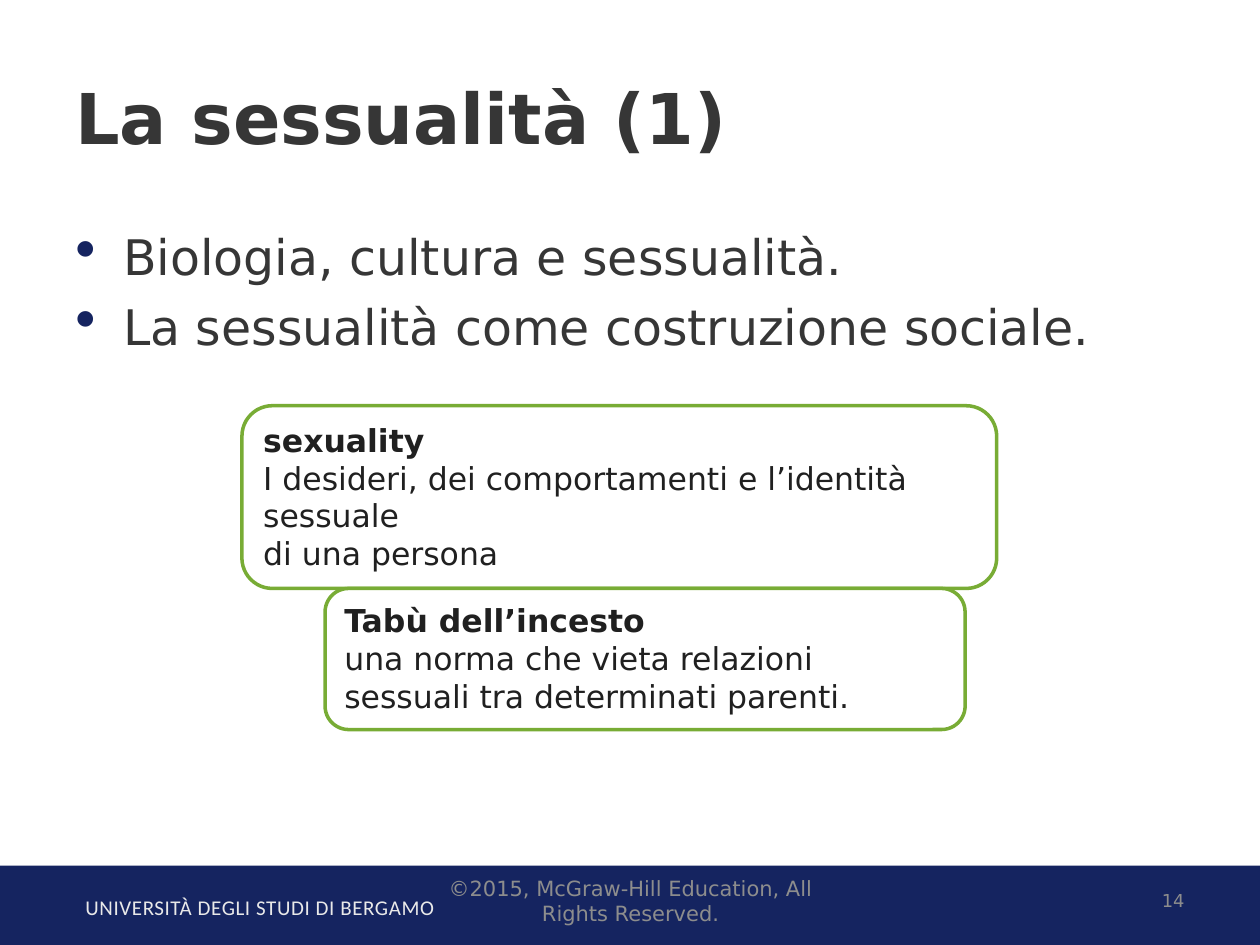
import dataclasses

import pptx
import pptx.dml.color
import pptx.enum.shapes
import pptx.enum.text
import pptx.util
from lxml import etree

Inches = pptx.util.Inches
Pt = pptx.util.Pt
Align = pptx.enum.text.PP_ALIGN
Anchor = pptx.enum.text.MSO_ANCHOR
Shapes = pptx.enum.shapes.MSO_SHAPE


@dataclasses.dataclass(frozen=True)
class Theme:
    navy: str = "152460"
    green: str = "78AC35"
    white: str = "FFFFFF"
    heading: str = "363636"
    ink: str = "202020"
    grey: str = "8D8D8D"
    pale: str = "E9E9E9"
    font: str = "DejaVu Sans"
    footer_font: str = "Calibri"
    title_size: float = 40
    body_size: float = 28
    card_size: float = 18
    footer_size: float = 12
    number_size: float = 10.2


THEME = Theme()


def rgb(value):
    return pptx.dml.color.RGBColor.from_string(value)


def apply(target, formats):
    for name, value in formats.items():
        setattr(target, name, value)


def write(para, text, size, color, bold=False, font=THEME.font):
    span = para.add_run()
    span.text = text
    apply(span.font, {"size": Pt(size), "name": font, "bold": bold})
    span.font.color.rgb = rgb(color)
    return span


def add_text_box(page, box, anchor=Anchor.TOP):
    frame = page.shapes.add_textbox(*map(Inches, box)).text_frame
    apply(frame, {"word_wrap": True, "vertical_anchor": anchor})
    return frame


def add_filled_shape(page, kind, box, fill):
    shape = page.shapes.add_shape(kind, *map(Inches, box))
    shape.shadow.inherit = False
    shape.fill.solid()
    shape.fill.fore_color.rgb = rgb(fill)
    return shape


def add_bullet(para):
    properties = para._p.get_or_add_pPr()
    indent = Inches(0.38)
    properties.set("marL", str(indent))
    properties.set("indent", str(-indent))
    namespace = pptx.oxml.ns.nsdecls("a")
    for element in (
        f'<a:buClr {namespace}><a:srgbClr val="{THEME.navy}"/></a:buClr>',
        f'<a:buSzPct {namespace} val="122000"/>',
        f'<a:buChar {namespace} char="•"/>',
    ):
        properties.append(etree.fromstring(element))


def add_title(page, box, text):
    frame = add_text_box(page, box, Anchor.MIDDLE)
    write(frame.paragraphs[0], text, THEME.title_size, THEME.heading, bold=True)


def add_bullets(page, box, lines):
    frame = add_text_box(page, box)
    for index, line in enumerate(lines):
        para = frame.add_paragraph() if index else frame.paragraphs[0]
        add_bullet(para)
        para.space_before = Pt(6.5 if index else 0)
        write(para, line, THEME.body_size, THEME.heading)


def add_definition(page, box, term, lines):
    card = add_filled_shape(page, Shapes.ROUNDED_RECTANGLE, box, THEME.white)
    card.line.color.rgb = rgb(THEME.green)
    card.line.width = Pt(2)
    frame = card.text_frame
    apply(frame, {"word_wrap": True, "vertical_anchor": Anchor.TOP})
    for index, line in enumerate([term, *lines]):
        para = frame.add_paragraph() if index else frame.paragraphs[0]
        para.alignment = Align.LEFT
        write(para, line, THEME.card_size, THEME.ink, bold=index == 0)


def add_footer(page, box, university, copyright_line, number):
    left, top, width, height = box
    bar = add_filled_shape(page, Shapes.RECTANGLE, box, THEME.navy)
    bar.line.fill.background()

    frame = add_text_box(page, (left + 0.58, top + 0.18, 5.82, 0.3))
    span = write(frame.paragraphs[0], university, THEME.footer_size,
                 THEME.pale, font=THEME.footer_font)
    span.font._element.set("spc", "35")

    for offset, breadth, text, size, alignment in (
        (3.42, 3.17, copyright_line, THEME.footer_size, Align.CENTER),
        (width - 2.83, 2.33, number, THEME.number_size, Align.RIGHT),
    ):
        area = (left + offset, top + 0.08, breadth, 0.4)
        para = add_text_box(page, area, Anchor.MIDDLE).paragraphs[0]
        para.alignment = alignment
        write(para, text, size, THEME.grey)


def main():
    deck = pptx.Presentation()
    apply(deck, {"slide_width": Inches(10), "slide_height": Inches(7.5)})
    page = deck.slides.add_slide(deck.slide_layouts[6])
    add_footer(page, (0, 6.87, 10, 0.63), "UNIVERSITÀ DEGLI STUDI DI BERGAMO",
               "©2015, McGraw-Hill Education, All Rights Reserved.", "14")
    add_title(page, (0.5, 0.3, 9, 1.25), "La sessualità (1)")
    add_bullets(page, (0.5, 1.75, 9, 4.95), [
        "Biologia, cultura e sessualità.",
        "La sessualità come costruzione sociale.",
    ])
    add_definition(page, (1.92, 3.22, 5.99, 1.45), "sexuality", [
        "I desideri, dei comportamenti e l’identità sessuale",
        "di una persona",
    ])
    add_definition(page, (2.58, 4.67, 5.08, 1.12), "Tabù dell’incesto", [
        "una norma che vieta relazioni sessuali tra determinati parenti.",
    ])
    deck.save("out.pptx")


if __name__ == "__main__":
    main()
